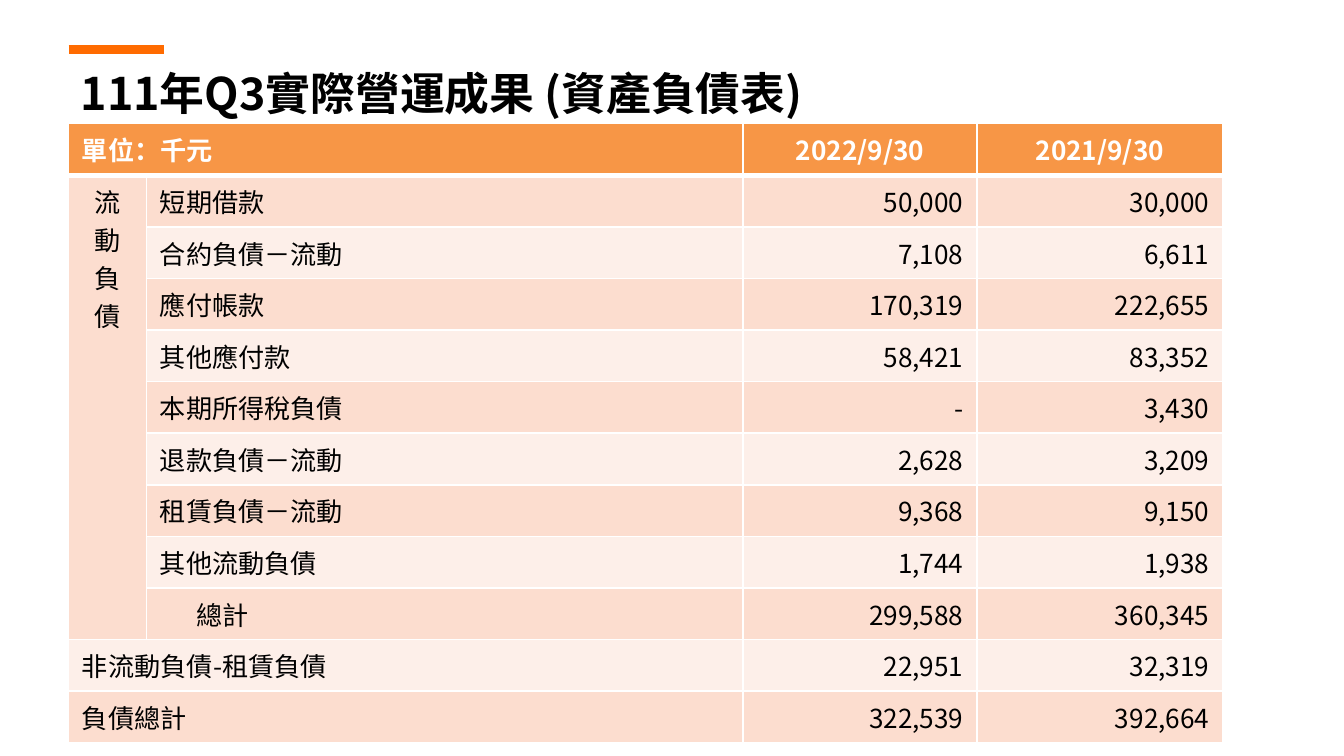
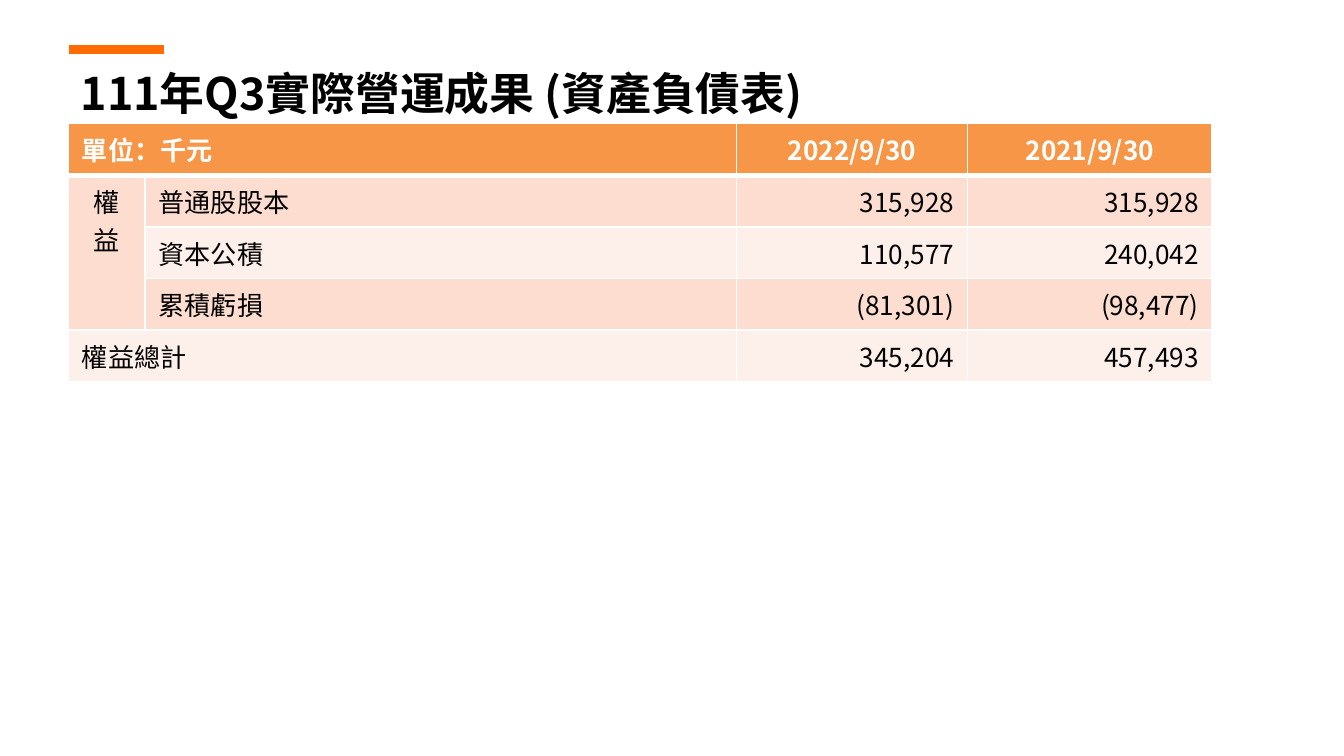
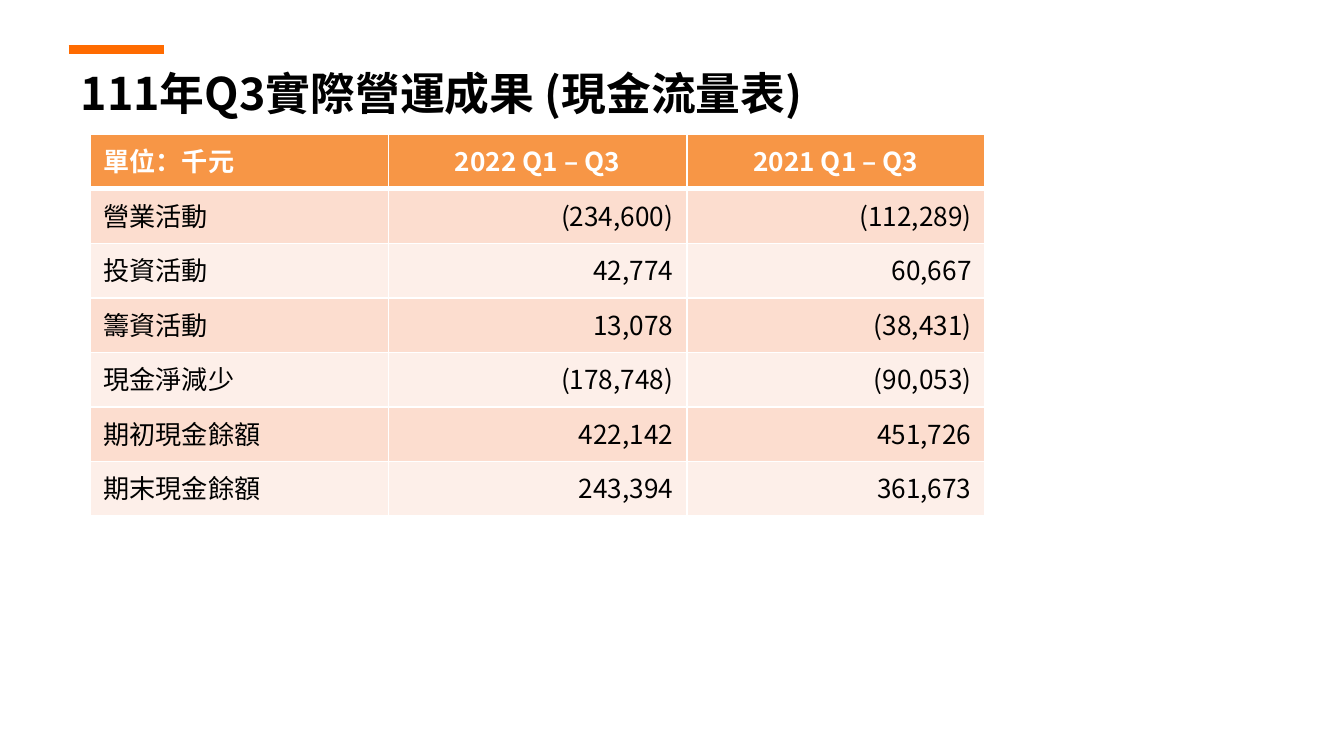
from lxml import etree
from pptx import Presentation
from pptx.dml.color import RGBColor
from pptx.enum.shapes import MSO_CONNECTOR
from pptx.enum.text import MSO_ANCHOR, PP_ALIGN
from pptx.oxml.ns import qn
from pptx.util import Inches, Pt

LEFT, CENTER, RIGHT = PP_ALIGN.LEFT, PP_ALIGN.CENTER, PP_ALIGN.RIGHT
MIDDLE = MSO_ANCHOR.MIDDLE
STRAIGHT = MSO_CONNECTOR.STRAIGHT
TITLE_ONLY = 5

FONT = "Noto Sans CJK SC"
ACCENT, HEADER, WHITE, BLACK = "FF6B00", "F79646", "FFFFFF", "000000"
BANDS = ("FDEFE9", "FCDDCF")
UNIT = "單位：千元"
DATES = ("2022/9/30", "2021/9/30")
GRAND_TOTAL = "總計"


def color(code):
    """Turn a hex string into a colour."""
    return RGBColor.from_string(code)


def grid(units):
    """Turn grid columns or rows, ten to the inch, into a length."""
    return Inches(units / 10)


class Report:
    """Hold the report's style and the slide being built."""

    def __init__(self):
        """Start an empty widescreen report."""
        self.presentation = Presentation()
        self.presentation.slide_width = grid(100)
        self.presentation.slide_height = grid(56.25)
        self.slide = None

    def add_slide(self, statement):
        """Start a slide with the accent line and the statement's title."""
        layout = self.presentation.slide_layouts[TITLE_ONLY]
        self.slide = self.presentation.slides.add_slide(layout)
        self.accent_line()
        title = self.slide.shapes.title
        title.left, title.top = grid(5), grid(3.7)
        title.width, title.height = grid(96.2), grid(6.3)
        frame = title.text_frame
        frame.text = f"111年Q3實際營運成果 ({statement})"
        frame.word_wrap = True
        frame.vertical_anchor = MIDDLE
        self.format_text(frame.paragraphs[0], 24, BLACK, True, LEFT)

    def accent_line(self):
        """Draw the short line above the title."""
        line = self.slide.shapes.add_connector(
            STRAIGHT, grid(5.1), grid(3.7), grid(12.2), grid(3.7))
        line.line.color.rgb = color(ACCENT)
        line.line.width = Pt(4.5)
        etree.SubElement(line._element.spPr, qn("a:effectLst"))

    def format_text(self, paragraph, size, text_color, bold, alignment):
        """Set the font and alignment of a paragraph."""
        paragraph.alignment = alignment
        font = paragraph.font
        font.size, font.bold, font.name = Pt(size), bold, FONT
        font.color.rgb = color(text_color)
        properties = paragraph._p.pPr.find(qn("a:defRPr"))
        etree.SubElement(properties, qn("a:ea"), typeface=FONT)

    def cell_borders(self, cell, bottom_width):
        """Give a cell white borders."""
        properties = cell._tc.get_or_add_tcPr()
        widths = {"a:lnL": 1, "a:lnR": 1, "a:lnT": 1, "a:lnB": bottom_width}
        for position, (tag, width) in enumerate(widths.items()):
            border = etree.Element(qn(tag), w=str(Pt(width)))
            fill = etree.SubElement(border, qn("a:solidFill"))
            etree.SubElement(fill, qn("a:srgbClr"), val=WHITE)
            properties.insert(position, border)

    def table(self, left, top, widths, row_height, rows):
        """Add a banded table whose last two columns hold figures."""
        table = self.slide.shapes.add_table(
            len(rows), len(widths), grid(left), grid(top),
            grid(sum(widths)), grid(row_height * len(rows))).table
        for column, width in zip(table.columns, widths):
            column.width = grid(width)
        for row_index, row in enumerate(rows):
            is_header = row_index == 0
            for column_index, text in enumerate(row):
                cell = table.cell(row_index, column_index)
                cell.text = text
                self.cell_borders(cell, 3 if is_header else 1)
                cell.fill.solid()
                cell.fill.fore_color.rgb = color(
                    HEADER if is_header else BANDS[row_index % 2])
                is_figure = column_index >= len(widths) - 2
                figure_alignment = CENTER if is_header else RIGHT
                self.format_text(
                    cell.text_frame.paragraphs[0], 14,
                    WHITE if is_header else BLACK, is_header,
                    figure_alignment if is_figure else LEFT)
                if text == GRAND_TOTAL:
                    cell.margin_left = grid(3.7)
        return table

    def balance_table(self, widths, group, items, totals):
        """Add a balance sheet with one group of items and its totals."""
        rows = [(UNIT, "", *DATES)]
        rows += [("" if index else group, *item)
                 for index, item in enumerate(items)]
        rows += [(label, "", *figures) for label, *figures in totals]
        table = self.table(5.1, 9.2, widths, 3.33, rows)
        group_end = len(items)
        group_cell = table.cell(1, 0)
        group_cell.merge(table.cell(group_end, 0))
        group_cell.text_frame.paragraphs[0].alignment = CENTER
        for row_index in (0, *range(group_end + 1, len(rows))):
            table.cell(row_index, 0).merge(table.cell(row_index, 1))


def main():
    """Build the three statements."""
    report = Report()

    report.add_slide("資產負債表")
    report.balance_table(
        (5.8, 44.4, 17.4, 18.3), "流動負債",
        [("短期借款", "50,000", "30,000"),
         ("合約負債－流動", "7,108", "6,611"),
         ("應付帳款", "170,319", "222,655"),
         ("其他應付款", "58,421", "83,352"),
         ("本期所得稅負債", "-", "3,430"),
         ("退款負債－流動", "2,628", "3,209"),
         ("租賃負債－流動", "9,368", "9,150"),
         ("其他流動負債", "1,744", "1,938"),
         (GRAND_TOTAL, "299,588", "360,345")],
        [("非流動負債-租賃負債", "22,951", "32,319"),
         ("負債總計", "322,539", "392,664")])

    report.add_slide("資產負債表")
    report.balance_table(
        (5.7, 44, 17.2, 18.2), "權益",
        [("普通股股本", "315,928", "315,928"),
         ("資本公積", "110,577", "240,042"),
         ("累積虧損", "(81,301)", "(98,477)")],
        [("權益總計", "345,204", "457,493")])

    report.add_slide("現金流量表")
    report.table(
        6.7, 10, (22.2,) * 3, 4.06,
        [(UNIT, "2022 Q1 – Q3", "2021 Q1 – Q3"),
         ("營業活動", "(234,600)", "(112,289)"),
         ("投資活動", "42,774", "60,667"),
         ("籌資活動", "13,078", "(38,431)"),
         ("現金淨減少", "(178,748)", "(90,053)"),
         ("期初現金餘額", "422,142", "451,726"),
         ("期末現金餘額", "243,394", "361,673")])

    report.presentation.save("out.pptx")


if __name__ == "__main__":
    main()
